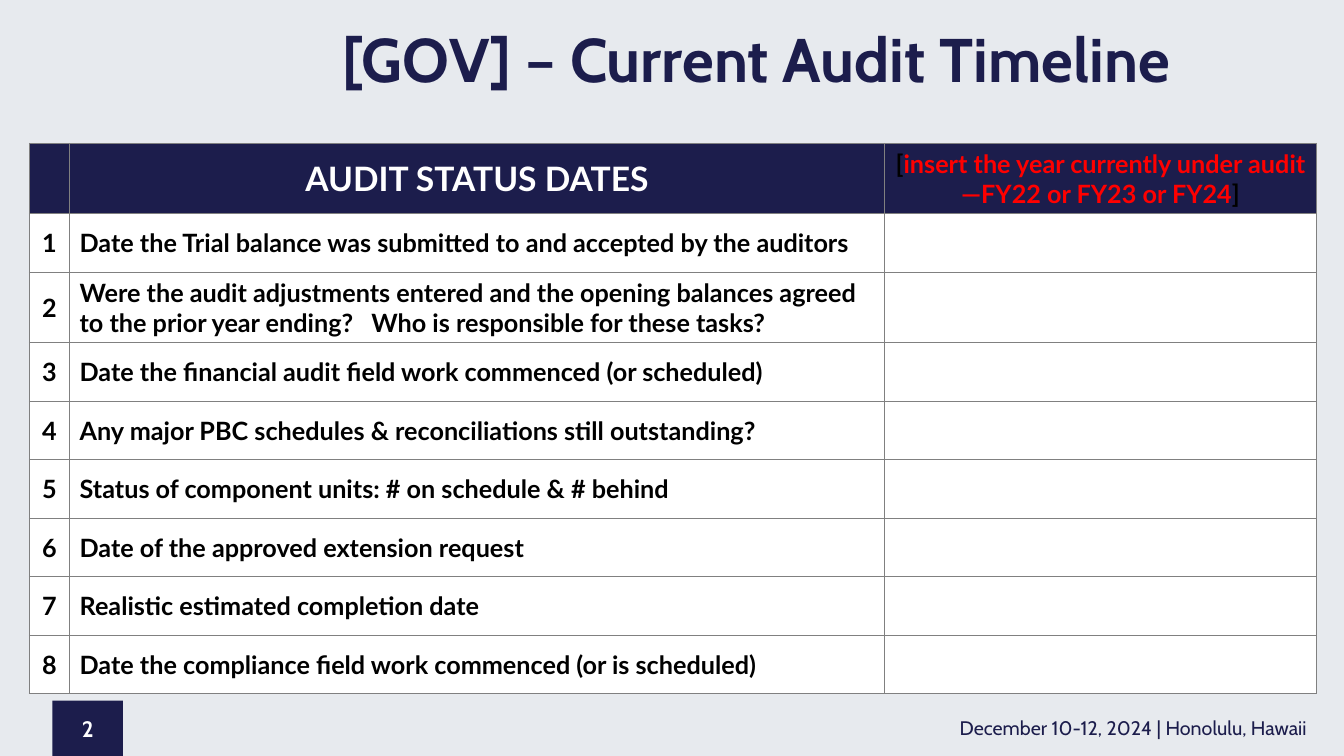
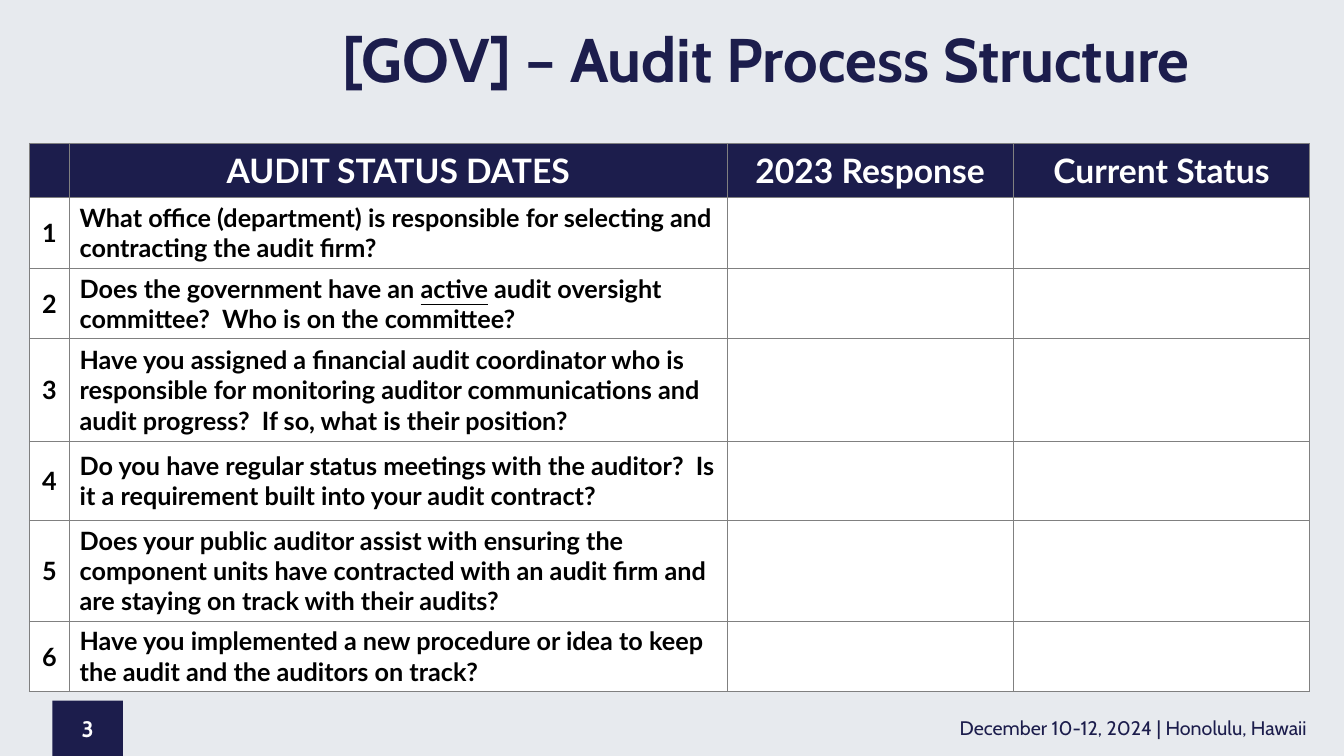
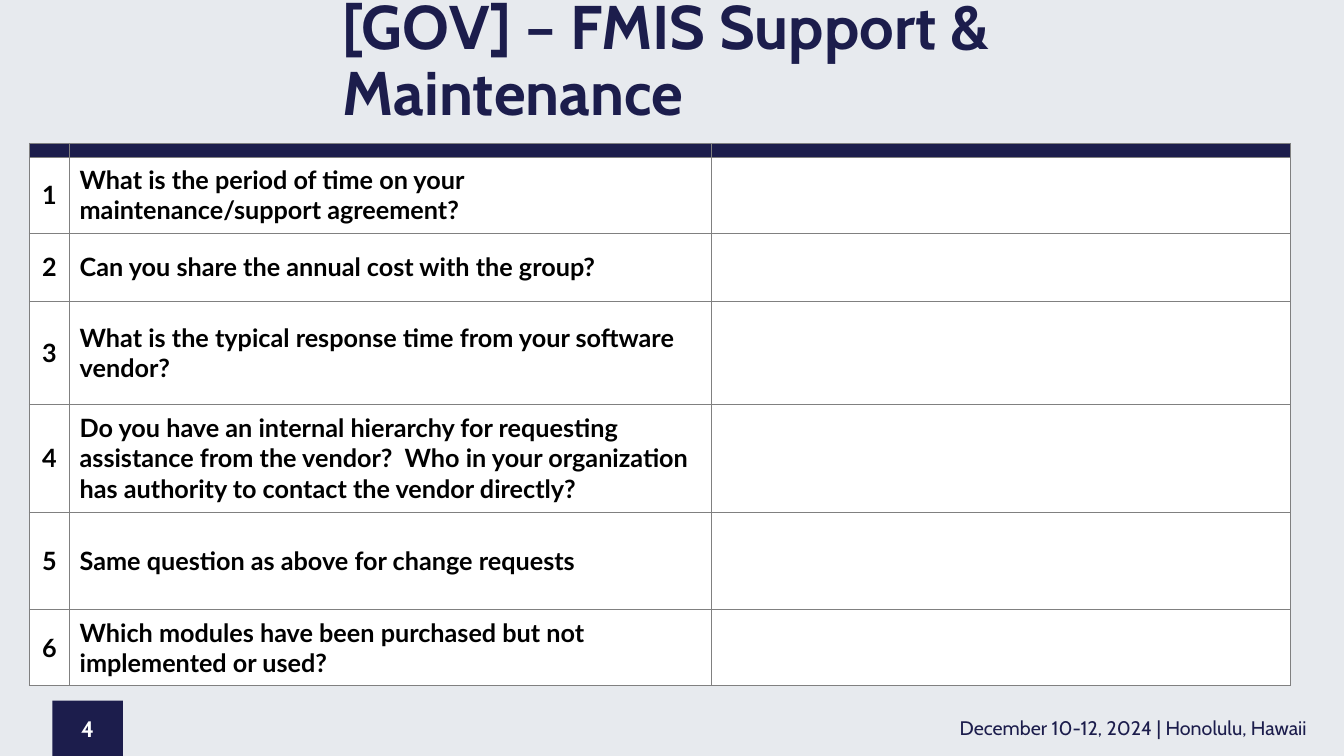
import pptx
import pptx.util
import pptx.dml.color
import pptx.enum.shapes
import pptx.enum.text
import pptx.oxml
import pptx.oxml.ns

Inches, Pt = pptx.util.Inches, pptx.util.Pt
RGB = pptx.dml.color.RGBColor.from_string
CENTER = pptx.enum.text.PP_ALIGN.CENTER
LEFT = pptx.enum.text.PP_ALIGN.LEFT
MIDDLE = pptx.enum.text.MSO_ANCHOR.MIDDLE

COLORS = {"navy": "1C1D4C", "page": "E7EAEE", "white": "FFFFFF",
          "black": "000000", "red": "FF0000", "grid": "808080"}

# Text styles
TITLE = {"name": "Cabin", "size": 44, "bold": True, "color": "navy"}
FOOTER = {"name": "Cabin", "size": 14, "bold": False, "color": "navy"}
PAGE = {"name": "Cabin", "size": 16, "bold": True, "color": "white"}
HEAD = {"name": "Lato", "size": 24, "bold": True, "color": "white"}
BODY = {"name": "Lato", "size": 18, "bold": True, "color": "black"}

# Slide content: a text is a string or a list of (text, style changes)
SLIDES = [
    {"title": "[GOV] – Current Audit Timeline",
     "cols": [0.4, 8.08, 4.29],
     "rows": [0.7, 0.58, 0.7] + [0.58] * 6,
     "head": ["AUDIT STATUS DATES",
              [("[", {"size": 18, "color": "black"}),
               ("insert the year currently under audit—FY22 or FY23 or FY24",
                {"size": 18, "color": "red"}),
               ("]", {"size": 18, "color": "black"})]],
     "items": [
         "Date the Trial balance was submitted to and accepted by the auditors",
         "Were the audit adjustments entered and the opening balances agreed "
         "to the prior year ending?   Who is responsible for these tasks?",
         "Date the financial audit field work commenced (or scheduled)",
         "Any major PBC schedules & reconciliations still outstanding?",
         "Status of component units: # on schedule & # behind",
         "Date of the approved extension request",
         "Realistic estimated completion date",
         "Date the compliance field work commenced (or is scheduled)"]},
    {"title": "[GOV] – Audit Process Structure",
     "cols": [0.4, 6.52, 2.84, 2.94],
     "rows": [0.54, 0.67, 0.67, 1.02, 0.78, 0.96, 0.67],
     "head": ["AUDIT STATUS DATES", "2023 Response", "Current Status"],
     "items": [
         "What office (department) is responsible for selecting and "
         "contracting the audit firm?",
         [("Does the government have an ", {}),
          ("active", {"underline": True}),
          (" audit oversight committee?  Who is on the committee?", {})],
         "Have you assigned a financial audit coordinator who is responsible "
         "for monitoring auditor communications and audit progress?  If so, "
         "what is their position?",
         "Do you have regular status meetings with the auditor?  Is it a "
         "requirement built into your audit contract?",
         "Does your public auditor assist with ensuring the component units "
         "have contracted with an audit firm and are staying on track with "
         "their audits?",
         "Have you implemented a new procedure or idea to keep the audit and "
         "the auditors on track?"]},
    {"title": "[GOV] – FMIS Support & Maintenance",
     "cols": [0.4, 6.36, 5.75],
     "rows": [0.14, 0.75, 0.68, 1.02, 1.07, 0.97, 0.75],
     "head": ["", ""],
     "items": [
         "What is the period of time on your maintenance/support agreement?",
         "Can you share the annual cost with the group?",
         "What is the typical response time from your software vendor?",
         "Do you have an internal hierarchy for requesting assistance from "
         "the vendor?  Who in your organization has authority to contact the "
         "vendor directly?",
         "Same question as above for change requests",
         "Which modules have been purchased but not implemented or used?"]},
]


def write(tf, text, style, align):
    tf.word_wrap = True
    tf.vertical_anchor = MIDDLE
    p = tf.paragraphs[0]
    p.alignment = align
    for part, changes in [(text, {})] if isinstance(text, str) else text:
        r = p.add_run()
        r.text = part
        for key, value in {**style, **changes}.items():
            if key == "color":
                r.font.color.rgb = RGB(COLORS[value])
            else:
                setattr(r.font, key, Pt(value) if key == "size" else value)


def format_cell(cell, text, style, align, fill):
    tcPr = cell._tc.get_or_add_tcPr()
    for side in ("lnL", "lnR", "lnT", "lnB"):
        tcPr.append(pptx.oxml.parse_xml(
            f'<a:{side} {pptx.oxml.ns.nsdecls("a")} w="6350"><a:solidFill>'
            f'<a:srgbClr val="{COLORS["grid"]}"/></a:solidFill></a:{side}>'))
    cell.fill.solid()
    cell.fill.fore_color.rgb = RGB(COLORS[fill])
    cell.vertical_anchor = MIDDLE
    if text:
        write(cell.text_frame, text, style, align)
    else:
        # Small type and no margins let an empty row stay thin
        cell.margin_top = cell.margin_bottom = 0
        cell.text_frame.paragraphs[0]._p.append(pptx.oxml.parse_xml(
            f'<a:endParaRPr {pptx.oxml.ns.nsdecls("a")} sz="600"/>'))


prs = pptx.Presentation()
prs.slide_width, prs.slide_height = Inches(13.33), Inches(7.5)
background = prs.slide_master.background.fill
background.solid()
background.fore_color.rgb = RGB(COLORS["page"])

for number, content in enumerate(SLIDES, start=2):
    s = prs.slides.add_slide(prs.slide_layouts[5])

    # Title
    sp = s.shapes.title
    sp.left, sp.top, sp.width, sp.height = map(Inches, (3, -0.03, 10.33, 1.3))
    tf = sp.text_frame
    tf.auto_size = pptx.enum.text.MSO_AUTO_SIZE.NONE
    tf.margin_left = Inches(0.4)
    write(tf, content["title"], TITLE, LEFT)
    tf.paragraphs[0].line_spacing = 0.9

    # Footer and page number
    sp = s.shapes.add_textbox(*map(Inches, (9.23, 7.02, 4.02, 0.4)))
    write(sp.text_frame, "December 10-12, 2024 | Honolulu, Hawaii", FOOTER, CENTER)
    sp = s.shapes.add_shape(pptx.enum.shapes.MSO_SHAPE.RECTANGLE,
                            *map(Inches, (0.52, 6.95, 0.7, 0.55)))
    sp.shadow.inherit = False
    sp.fill.solid()
    sp.fill.fore_color.rgb = RGB(COLORS["navy"])
    sp.line.fill.background()
    write(sp.text_frame, str(number), PAGE, CENTER)

    # Table
    cols, rows = content["cols"], content["rows"]
    table = s.shapes.add_table(len(rows), len(cols), Inches(0.29), Inches(1.42),
                               Inches(sum(cols)), Inches(sum(rows))).table
    table.first_row = table.horz_banding = False
    for column, width in zip(table.columns, cols):
        column.width = Inches(width)
    for row, height in zip(table.rows, rows):
        row.height = Inches(height)
    for c, text in enumerate([""] + content["head"]):
        format_cell(table.cell(0, c), text, HEAD, CENTER, "navy")
    answers = [""] * (len(cols) - 2)
    for i, item in enumerate(content["items"], start=1):
        for c, text in enumerate([str(i), item] + answers):
            format_cell(table.cell(i, c), text, BODY, LEFT if c else CENTER, "white")

prs.save("out.pptx")
